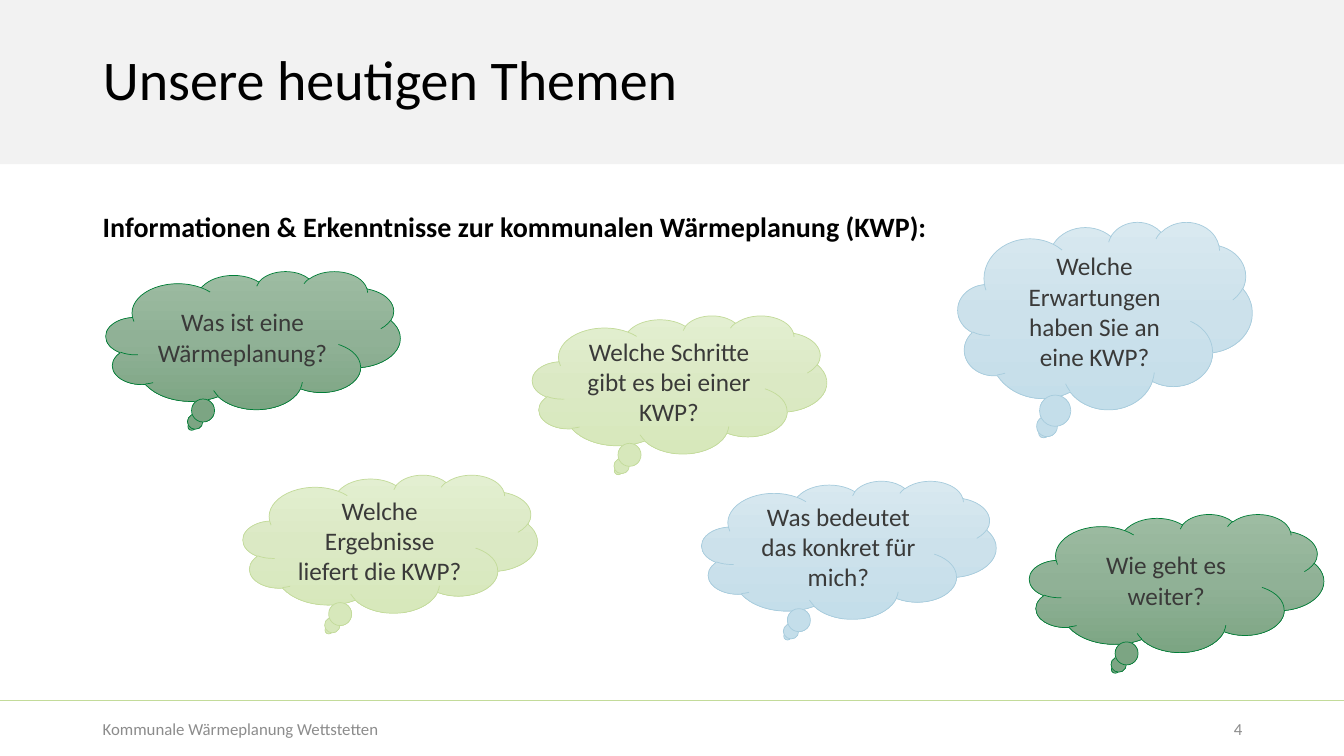
from copy import deepcopy

from pptx import Presentation
from pptx.dml.color import RGBColor
from pptx.enum.shapes import MSO_CONNECTOR, MSO_SHAPE
from pptx.enum.text import MSO_ANCHOR, MSO_AUTO_SIZE, PP_ALIGN
from pptx.oxml.ns import qn
from pptx.oxml.xmlchemy import OxmlElement
from pptx.util import Inches, Pt

CLOUD, RECTANGLE = MSO_SHAPE.CLOUD_CALLOUT, MSO_SHAPE.RECTANGLE
STRAIGHT = MSO_CONNECTOR.STRAIGHT
TOP, MIDDLE = MSO_ANCHOR.TOP, MSO_ANCHOR.MIDDLE
LEFT, CENTER, RIGHT = PP_ALIGN.LEFT, PP_ALIGN.CENTER, PP_ALIGN.RIGHT
NO_AUTOFIT = MSO_AUTO_SIZE.NONE

BLACK = RGBColor(0x00, 0x00, 0x00)
BAND_GREY = RGBColor(0xF2, 0xF2, 0xF2)
FOOTER_GREY = RGBColor(0x8C, 0x8C, 0x8C)
QUESTION_GREY = RGBColor(0x3A, 0x3A, 0x39)
DARK_GREEN = RGBColor(0x00, 0x7E, 0x37)
LIGHT_GREEN = RGBColor(0xC3, 0xDB, 0x9A)
BLUE = RGBColor(0xA7, 0xCC, 0xDD)

# Outline colour -> gradient from top to bottom
GRADIENTS = {
    DARK_GREEN: (RGBColor(0x9D, 0xBC, 0xA2), RGBColor(0x90, 0xB1, 0x96),
                 RGBColor(0x7C, 0xA5, 0x83)),
    LIGHT_GREEN: (RGBColor(0xE3, 0xEF, 0xD1), RGBColor(0xDB, 0xE9, 0xC4),
                  RGBColor(0xD7, 0xE8, 0xBB)),
    BLUE: (RGBColor(0xD9, 0xE9, 0xF0), RGBColor(0xCC, 0xE1, 0xEB),
           RGBColor(0xC4, 0xDE, 0xEA)),
}

SLIDE_WIDTH, SLIDE_HEIGHT = 13.33, 7.5
MARGIN, CONTENT_WIDTH = 0.92, 11.5
CLOUD_WIDTH, CLOUD_HEIGHT, TALL_CLOUD_HEIGHT = 2.92, 1.37, 1.86

# Question, left, top, height, colour
QUESTIONS = [
    ("Was ist eine Wärmeplanung?", 1.05, 2.69, CLOUD_HEIGHT, DARK_GREEN),
    ("Welche Schritte gibt es bei einer KWP?", 5.28, 3.13, CLOUD_HEIGHT, LIGHT_GREEN),
    ("Welche Erwartungen haben Sie an eine KWP?", 9.5, 2.2, TALL_CLOUD_HEIGHT, BLUE),
    ("Welche Ergebnisse liefert die KWP?", 2.41, 4.71, CLOUD_HEIGHT, LIGHT_GREEN),
    ("Was bedeutet das konkret für mich?", 6.96, 4.77, CLOUD_HEIGHT, BLUE),
    ("Wie geht es weiter?", 10.21, 5.1, CLOUD_HEIGHT, DARK_GREEN),
]


def inches(box):
    return [Inches(length) for length in box]


def write(holder, text, size, color, anchor=MIDDLE, bold=False, **paragraph_format):
    frame = holder.text_frame
    frame.text = text
    frame.word_wrap = True
    frame.auto_size = NO_AUTOFIT
    frame.vertical_anchor = anchor
    paragraph = frame.paragraphs[0]
    for name, value in paragraph_format.items():
        setattr(paragraph, name, value)
    font = paragraph.runs[0].font
    for name, value in {"name": "Calibri", "size": Pt(size), "bold": bold}.items():
        setattr(font, name, value)
    font.color.rgb = color


def add_header(slide, box):
    left, top, width, height = box
    band = slide.shapes.add_shape(RECTANGLE, *inches(box))
    band.shadow.inherit = False
    band.fill.solid()
    band.fill.fore_color.rgb = BAND_GREY
    band.line.fill.background()

    # The band lies behind the title
    title = slide.shapes.title
    title._element.addprevious(band._element)
    title.left, title.top, title.width, title.height = inches(
        (left + MARGIN, top + 0.09, CONTENT_WIDTH, height - 0.18))
    write(title, "Unsere heutigen Themen", 40, BLACK, alignment=LEFT, line_spacing=0.9)


def add_intro(slide, box):
    intro = slide.shapes.add_textbox(*inches(box))
    write(intro, "Informationen & Erkenntnisse zur kommunalen Wärmeplanung (KWP):",
          20, BLACK, anchor=TOP, bold=True, line_spacing=1.1, space_after=Pt(6))


def add_question(slide, box, question, color):
    cloud = slide.shapes.add_shape(CLOUD, *inches(box))
    cloud.shadow.inherit = False
    cloud.line.color.rgb = color
    cloud.line.width = Pt(0.5)

    # Three-stop gradient running downwards
    cloud.fill.gradient()
    cloud.fill.gradient_angle = 270
    stop_list = cloud._element.spPr.find(qn("a:gradFill")).find(qn("a:gsLst"))
    stop_list.insert(1, deepcopy(stop_list[0]))
    for position, stop, shade in zip((0, 0.5, 1), cloud.fill.gradient_stops,
                                     GRADIENTS[color]):
        stop.position = position
        stop.color.rgb = shade
    write(cloud, question, 18, QUESTION_GREY, alignment=CENTER)


def add_footer(slide, box):
    left, top, width, height = box
    rule = slide.shapes.add_connector(
        STRAIGHT, *inches((left, top, left + width, top)))
    rule.line.color.rgb = LIGHT_GREEN
    rule.line.width = Pt(0.5)
    rule._element.spPr.append(OxmlElement("a:effectLst"))

    # Footer text and page number
    for text, offset, text_width, alignment in (
            ("Kommunale Wärmeplanung Wettstetten", MARGIN, 8, LEFT),
            ("4", 11.51, 0.91, RIGHT)):
        entry = slide.shapes.add_textbox(
            *inches((left + offset, top + 0.08, text_width, 0.4)))
        write(entry, text, 12, FOOTER_GREY, alignment=alignment)


def main():
    presentation = Presentation()
    presentation.slide_width = Inches(SLIDE_WIDTH)
    presentation.slide_height = Inches(SLIDE_HEIGHT)
    slide = presentation.slides.add_slide(
        presentation.slide_layouts.get_by_name("Title Only"))

    add_header(slide, (0, 0, SLIDE_WIDTH, 1.63))
    add_intro(slide, (MARGIN, 2, CONTENT_WIDTH, 4.76))
    add_footer(slide, (0, 6.95, SLIDE_WIDTH, SLIDE_HEIGHT - 6.95))
    for question, left, top, height, color in QUESTIONS:
        add_question(slide, (left, top, CLOUD_WIDTH, height), question, color)

    presentation.save("out.pptx")


if __name__ == "__main__":
    main()
